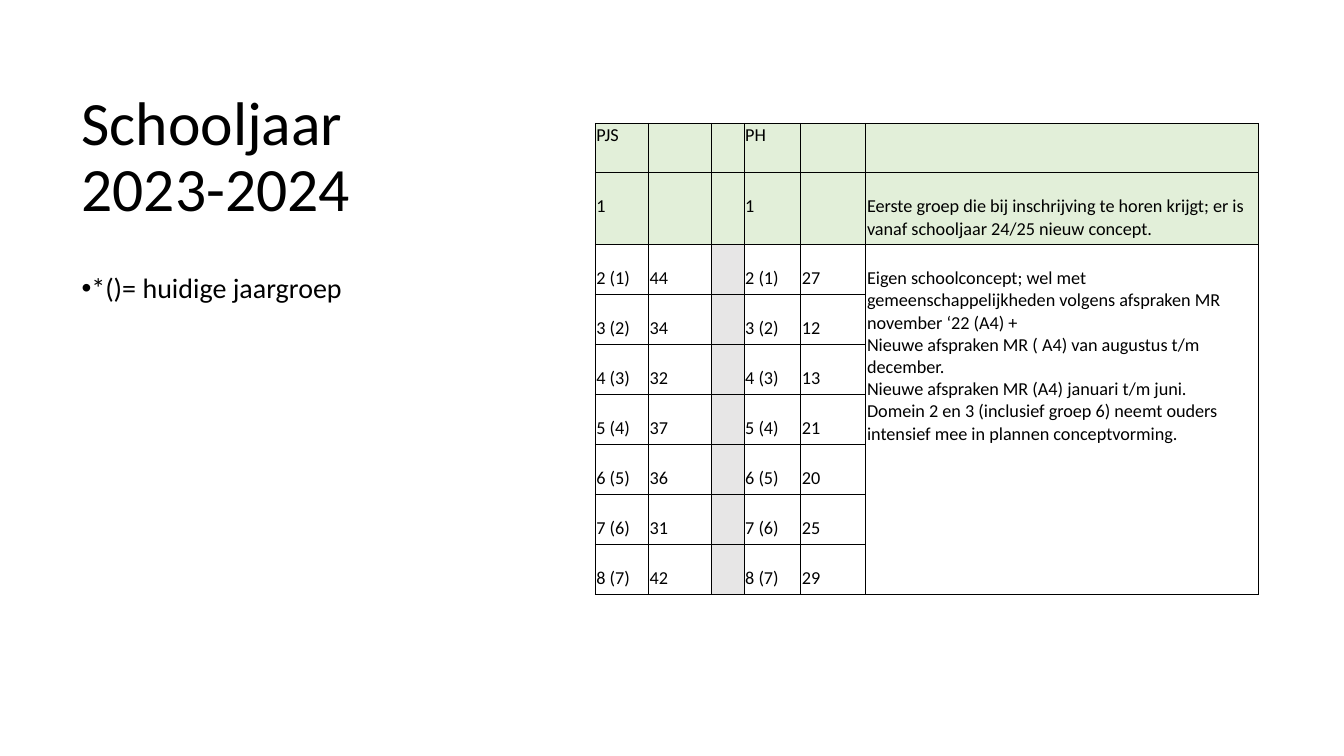
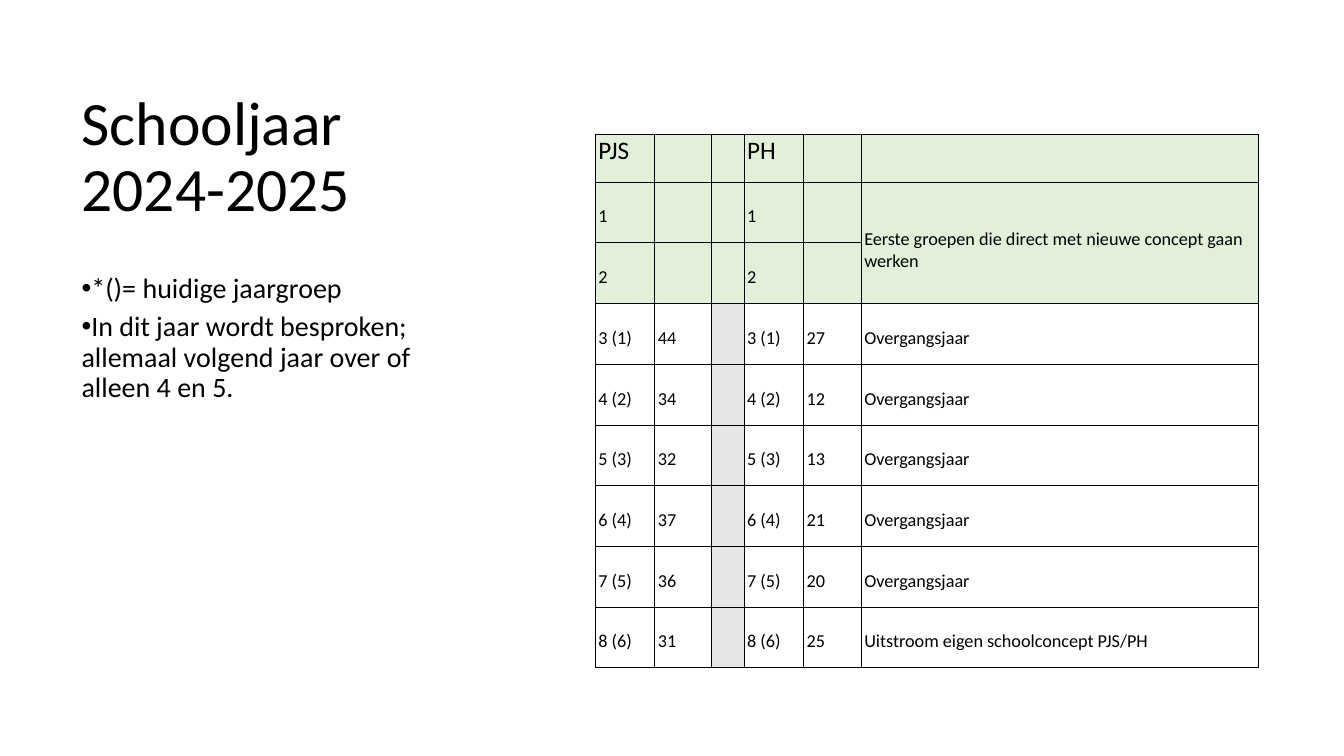
"""Build two slides that compare the year groups of two schools per school year."""
from dataclasses import dataclass

from lxml.etree import SubElement
from pptx import Presentation
from pptx.dml.color import RGBColor
from pptx.enum.text import MSO_ANCHOR, MSO_AUTO_SIZE, PP_ALIGN
from pptx.oxml.ns import qn
from pptx.util import Cm, Pt

COLORS = {"text": "000000", "line": "000000", "plain": "FFFFFF",
          "new": "E2EFD9", "gap": "E7E6E6"}
FONT = "Calibri"
LEFT, TEXT_WIDTH, TABLE_LEFT = 1.8, 9.73, 15.0
TEXT_LINE = 0.56
TABLE_PT = 13
GROUPS = 8
GAP_COL, REMARK_COL = 2, 5
PJS = [44, 34, 32, 37, 36, 31, 42]
PH = [27, 12, 13, 21, 20, 25, 29]


@dataclass(frozen=True)
class Remark:
    row: int
    text: str
    span: int = 1
    lines_above: int = 1


@dataclass(frozen=True)
class SchoolYear:
    title: str
    bullets: list[str]
    shift: int
    top: float
    cols: list[float]
    rows: list[float]
    inset: float
    head_pt: int
    remarks: list[Remark]


YEARS = [
    SchoolYear(
        "Schooljaar 2023-2024", ["*()= huidige jaargroep"], 1, 3.11,
        [1.34, 1.58, 0.83, 1.43, 1.64, 9.89], [1.23, 1.81] + [1.26] * 7, 0.03, 13,
        [Remark(1, "Eerste groep die bij inschrijving te horen krijgt; er is vanaf "
                   "schooljaar 24/25 nieuw concept."),
         Remark(2, "Eigen schoolconcept; wel met gemeenschappelijkheden volgens "
                   "afspraken MR november ‘22 (A4) +\n"
                   "Nieuwe afspraken MR ( A4) van augustus t/m december.\n"
                   "Nieuwe afspraken MR (A4) januari t/m juni.\n"
                   "Domein 2 en 3 (inclusief groep 6) neemt ouders intensief mee in "
                   "plannen conceptvorming.", span=7)]),
    SchoolYear(
        "Schooljaar\v2024-2025",
        ["*()= huidige jaargroep",
         "In dit jaar wordt besproken; allemaal volgend jaar over of alleen 4 en 5."],
        2, 3.38,
        [1.5, 1.42, 0.83, 1.5, 1.45, 10.01], [1.21] + [1.53] * 8, 0.08, 18,
        [Remark(1, "Eerste groepen die direct met nieuwe concept gaan werken",
                span=2, lines_above=2),
         *[Remark(row, "Overgangsjaar") for row in range(3, GROUPS)],
         Remark(GROUPS, "Uitstroom eigen schoolconcept PJS/PH")]),
]


def rgb(name: str) -> RGBColor:
    return RGBColor.from_string(COLORS[name])


def style_runs(p, size: int) -> None:
    p.alignment = PP_ALIGN.LEFT
    for r in p.runs:
        r.font.name = FONT
        r.font.size = Pt(size)
        r.font.color.rgb = rgb("text")


def place(sp, top: float, height: float) -> None:
    sp.left, sp.top, sp.width, sp.height = Cm(LEFT), Cm(top), Cm(TEXT_WIDTH), Cm(height)
    sp.text_frame.word_wrap = True
    sp.text_frame.auto_size = MSO_AUTO_SIZE.NONE


def add_title(s, text: str) -> None:
    sp = s.shapes.title
    place(sp, 1.75, 4.5)
    tf = sp.text_frame
    tf.text = text
    tf.vertical_anchor = MSO_ANCHOR.MIDDLE
    tf.paragraphs[0].line_spacing = 0.9
    style_runs(tf.paragraphs[0], 44)


def add_bullets(s, bullets: list[str]) -> None:
    sp = s.placeholders[1]
    place(sp, 6.78, 10.52)
    tf = sp.text_frame
    tf.text = "\n".join(bullets)
    tf.vertical_anchor = MSO_ANCHOR.TOP
    for p in tf.paragraphs:
        p.line_spacing = 0.9
        p.space_before, p.space_after = Pt(0), Pt(6)
        style_runs(p, 20)
        pPr = p._p.get_or_add_pPr()
        pPr.set("marL", "0")
        pPr.set("indent", str(-Cm(0.64)))
        SubElement(pPr, qn("a:buChar"), char="•")


def format_cell(cell, fill: str, inset: float) -> None:
    tcPr = cell._tc.get_or_add_tcPr()
    for side in ("lnL", "lnR", "lnT", "lnB"):
        ln = SubElement(tcPr, qn(f"a:{side}"), w=str(Pt(0.75)))
        solid = SubElement(ln, qn("a:solidFill"))
        SubElement(solid, qn("a:srgbClr"), val=COLORS["line"])
    cell.fill.solid()
    cell.fill.fore_color.rgb = rgb(fill)
    cell.margin_left = cell.margin_right = Cm(inset)
    cell.margin_top = cell.margin_bottom = Cm(0.03)


def write_cell(cell, text: str, size: int = TABLE_PT, lines_above: int = 1) -> None:
    cell.margin_top = Cm(0.03 + lines_above * TEXT_LINE)
    cell.text_frame.text = text
    for p in cell.text_frame.paragraphs:
        style_runs(p, size)


def cell_fill(row: int, col: int, shift: int) -> str:
    if row <= shift:
        return "new"
    return "gap" if col == GAP_COL else "plain"


def add_group_table(s, year: SchoolYear) -> None:
    frame = s.shapes.add_table(len(year.rows), len(year.cols), Cm(TABLE_LEFT), Cm(year.top),
                               Cm(sum(year.cols)), Cm(sum(year.rows)))
    table = frame.table
    table.first_row = table.horz_banding = False
    for col, width in zip(table.columns, year.cols):
        col.width = Cm(width)
    for row, height in zip(table.rows, year.rows):
        row.height = Cm(height)
    for i in range(len(year.rows)):
        for j in range(len(year.cols)):
            format_cell(table.cell(i, j), cell_fill(i, j, year.shift), year.inset)

    for col, school, counts in ((0, "PJS", PJS), (3, "PH", PH)):
        write_cell(table.cell(0, col), school, year.head_pt, 0)
        for group in range(1, GROUPS + 1):
            current = group - year.shift
            label = f"{group} ({current})" if current > 0 else str(group)
            write_cell(table.cell(group, col), label)
            if current > 0:
                write_cell(table.cell(group, col + 1), str(counts[current - 1]))

    for remark in year.remarks:
        cell = table.cell(remark.row, REMARK_COL)
        if remark.span > 1:
            cell.merge(table.cell(remark.row + remark.span - 1, REMARK_COL))
        write_cell(cell, remark.text, lines_above=remark.lines_above)


def main() -> None:
    prs = Presentation()
    prs.slide_width, prs.slide_height = Cm(33.87), Cm(19.05)
    for year in YEARS:
        s = prs.slides.add_slide(prs.slide_layouts[1])
        add_title(s, year.title)
        add_bullets(s, year.bullets)
        add_group_table(s, year)
    prs.save("out.pptx")


if __name__ == "__main__":
    main()
